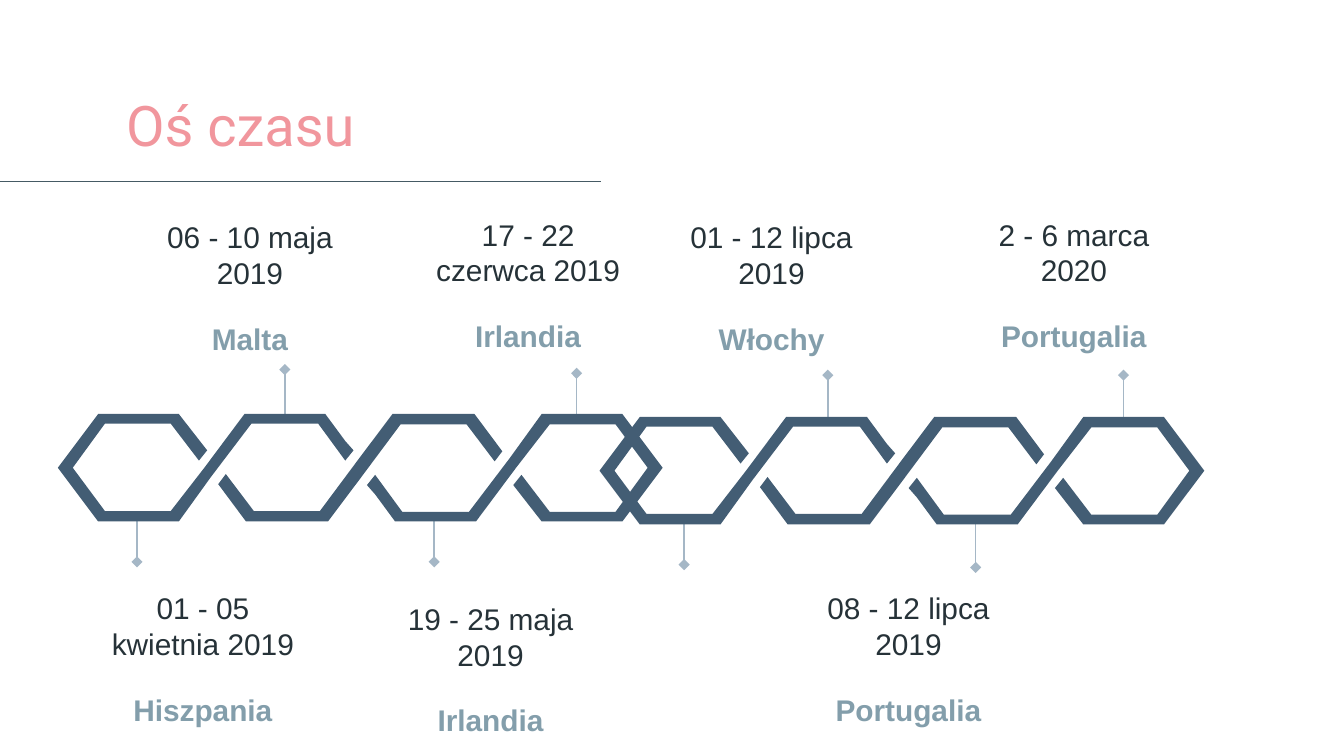
from typing import NamedTuple

from lxml.etree import SubElement
from pptx import Presentation
from pptx.dml.color import RGBColor
from pptx.enum.shapes import MSO_CONNECTOR
from pptx.enum.text import MSO_ANCHOR, PP_ALIGN
from pptx.oxml.ns import qn
from pptx.shapes.connector import Connector
from pptx.shapes.shapetree import SlideShapes
from pptx.text.text import TextFrame
from pptx.util import Pt

CORAL = RGBColor(0xF1, 0x96, 0x9D)
SLATE = RGBColor(0x45, 0x5A, 0x64)
INK = RGBColor(0x26, 0x32, 0x38)
MIST = RGBColor(0x83, 0x9E, 0xAB)
PIN_BLUE = RGBColor(0xA5, 0xB7, 0xC6)
CHAIN_BLUE = RGBColor(0x43, 0x5D, 0x74)

TITLE_FORMAT = {"name": "Roboto", "size": Pt(30), "bold": False}
DATE_FORMAT = {"name": "Arial", "size": Pt(16), "bold": False}
COUNTRY_FORMAT = DATE_FORMAT | {"bold": True}

CHAIN_WIDTH = 324
CHAIN_HEIGHT = 57.6

Outline = list[tuple[float, float]]


class Visit(NamedTuple):
    dates: str
    country: str
    left: float
    top: float


class Pin(NamedTuple):
    x: float
    start: float
    length: float


VISITS = [
    Visit("01 - 05 kwietnia 2019", "Hiszpania", 50.4, 308.9),
    Visit("06 - 10 maja 2019", "Malta", 75.6, 110.2),
    Visit("19 - 25 maja 2019", "Irlandia", 204.5, 314.6),
    Visit("17 - 22 czerwca 2019", "Irlandia", 224.6, 108.7),
    Visit("01 - 12 lipca 2019", "Włochy", 355, 110.2),
    Visit("08 - 12 lipca 2019", "Portugalia", 428.4, 308.9),
    Visit("2 - 6 marca 2020", "Portugalia", 517, 108.7),
]

PINS = [
    Pin(73.4, 275, 26),
    Pin(152.6, 224, -26),
    Pin(232.6, 275, 26),
    Pin(308.9, 226, -26),
    Pin(366.5, 276.5, 26),
    Pin(443.5, 227, -26),
    Pin(522.7, 278, 26),
    Pin(601.9, 227, -26),
]

FIRST_LINK: Outline = [
    (21.6, 0), (0, 28.8), (21.6, 57.6), (64.8, 57.6), (82, 33.8),
    (103.7, 5.2), (139.5, 5.2), (154, 25), (158.4, 19.5), (154, 14.5),
    (143.3, 0), (100, 0), (78.5, 28.8), (60.5, 52), (25.2, 52), (8, 28.8),
    (25.2, 5.2), (60.5, 5.2), (75.6, 25), (80, 19.5), (64.8, 0),
]
MIDDLE_HALF: Outline = [
    (179.3, 0), (162, 23), (140.4, 52), (105, 52), (90, 32.2), (85.9, 37.6),
    (100.8, 57.6),
]


def half_turn(outline: Outline) -> Outline:
    return [(CHAIN_WIDTH - x, CHAIN_HEIGHT - y) for x, y in outline]


def draw_chain(shapes: SlideShapes, left: float, top: float) -> None:
    middle_link = MIDDLE_HALF + half_turn(MIDDLE_HALF)
    for outline in (FIRST_LINK, half_turn(FIRST_LINK), middle_link):
        corners = [(Pt(left + x), Pt(top + y)) for x, y in outline]
        builder = shapes.build_freeform(*corners[0])
        builder.add_line_segments(corners[1:], close=True)
        link = builder.convert_to_shape()
        link.shadow.inherit = False
        link.fill.solid()
        link.fill.fore_color.rgb = CHAIN_BLUE
        link.line.fill.background()


def draw_line(shapes: SlideShapes, x1: float, y1: float, x2: float, y2: float,
              color: RGBColor) -> Connector:
    line = shapes.add_connector(
        MSO_CONNECTOR.STRAIGHT, Pt(x1), Pt(y1), Pt(x2), Pt(y2))
    line.line.color.rgb = color
    line.line.width = Pt(0.75)
    SubElement(line._element.spPr, qn("a:effectLst"))
    return line


def draw_pin(shapes: SlideShapes, pin: Pin) -> None:
    stem = draw_line(shapes, pin.x, pin.start, pin.x, pin.start + pin.length,
                     PIN_BLUE)
    outline = stem._element.spPr.find(qn("a:ln"))
    SubElement(outline, qn("a:tailEnd"), type="diamond")


def add_frame(shapes: SlideShapes, left: float, top: float, width: float,
              height: float, anchor: MSO_ANCHOR) -> TextFrame:
    frame = shapes.add_textbox(
        Pt(left), Pt(top), Pt(width), Pt(height)).text_frame
    settings = {"word_wrap": True, "vertical_anchor": anchor}
    settings |= {f"margin_{side}": Pt(7.2)
                 for side in ("left", "top", "right", "bottom")}
    for name, value in settings.items():
        setattr(frame, name, value)
    return frame


def write(paragraph, text: str, font_format: dict, color: RGBColor) -> None:
    run = paragraph.add_run()
    run.text = text
    for name, value in font_format.items():
        setattr(run.font, name, value)
    run.font.color.rgb = color


def draw_visit(shapes: SlideShapes, visit: Visit) -> None:
    frame = add_frame(shapes, visit.left, visit.top, 116.6, 47.5,
                      MSO_ANCHOR.TOP)
    dates, country = frame.paragraphs[0], frame.add_paragraph()
    write(dates, visit.dates, DATE_FORMAT, INK)
    write(country, visit.country, COUNTRY_FORMAT, MIST)
    for paragraph in (dates, country):
        paragraph.alignment = PP_ALIGN.CENTER
        paragraph.space_after = Pt(16)


def main() -> None:
    """Build the timeline slide of visits along two interlocked chains."""
    deck = Presentation()
    deck.slide_width, deck.slide_height = Pt(720), Pt(405)
    shapes = deck.slides.add_slide(deck.slide_layouts[6]).shapes

    draw_line(shapes, 0, 97.2, 321.8, 97.2, SLATE)
    heading = add_frame(shapes, 60.5, 31.7, 344.9, 59.8, MSO_ANCHOR.BOTTOM)
    write(heading.paragraphs[0], "Oś czasu", TITLE_FORMAT, CORAL)

    for pin in PINS:
        draw_pin(shapes, pin)
    for left, top in ((31, 221.8), (321.2, 223.4)):
        draw_chain(shapes, left, top)
    for visit in VISITS:
        draw_visit(shapes, visit)

    deck.save("out.pptx")


if __name__ == "__main__":
    main()
